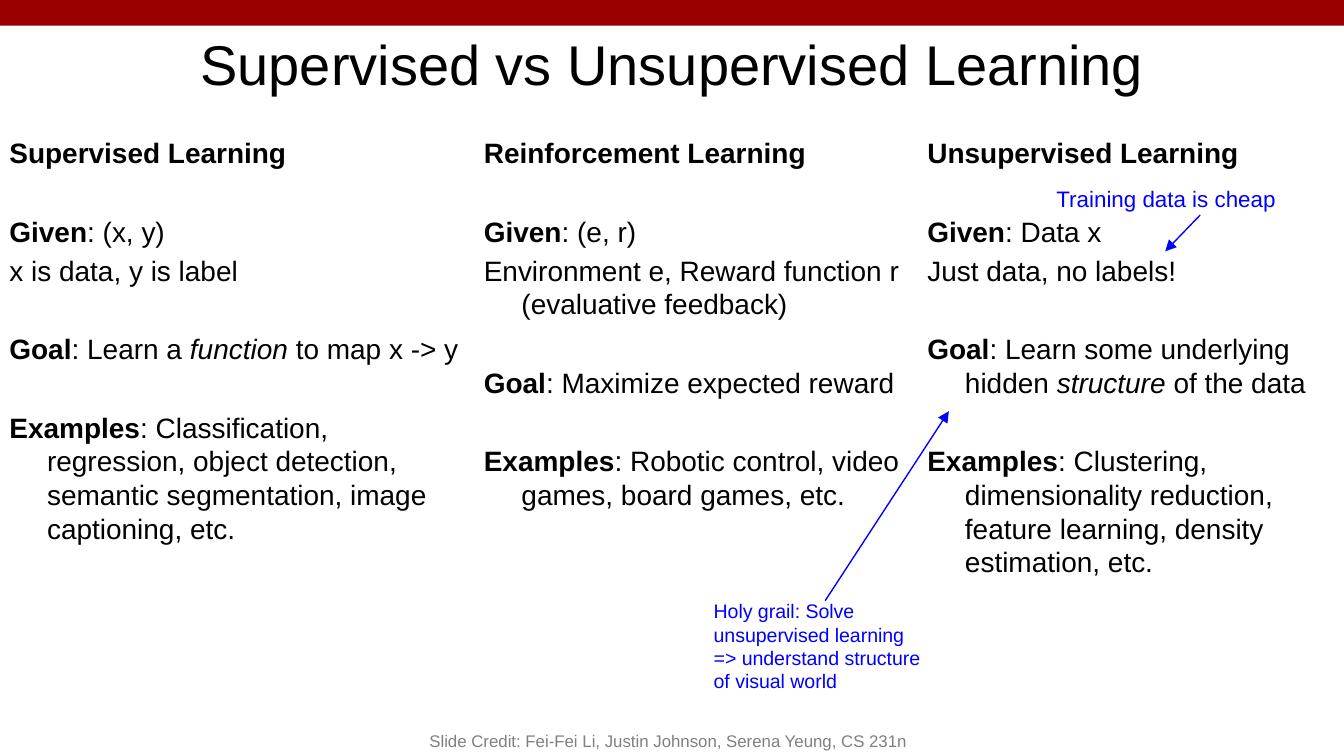
from lxml.etree import SubElement
from pptx import Presentation
from pptx.dml.color import RGBColor
from pptx.enum.shapes import MSO_CONNECTOR, MSO_SHAPE
from pptx.enum.text import MSO_ANCHOR, MSO_AUTO_SIZE, PP_ALIGN
from pptx.oxml.ns import qn
from pptx.util import Inches, Pt

HEADING_GAP = 24
LINE_GAP = 3


def color(hex_string):
    return RGBColor.from_string(hex_string)


class SlideBuilder:
    font = "Arial"
    black, red, blue, gray = "000000", "990000", "0000FF", "808080"
    inset = 0.07

    def __init__(self, slide):
        self.slide = slide

    def place(self, shape, left, top, width, height):
        shape.left, shape.top = Inches(left), Inches(top)
        shape.width, shape.height = Inches(width), Inches(height)

    def frame(self, shape, anchor=MSO_ANCHOR.TOP, vertical_inset=inset):
        text_frame = shape.text_frame
        text_frame.word_wrap = True
        text_frame.auto_size = MSO_AUTO_SIZE.NONE
        text_frame.vertical_anchor = anchor
        text_frame.margin_left = text_frame.margin_right = Inches(self.inset)
        text_frame.margin_top = text_frame.margin_bottom = Inches(vertical_inset)
        return text_frame

    def style(self, run, size, hex_string, bold=False, italic=False):
        run.font.name = self.font
        run.font.size = Pt(size)
        run.font.color.rgb = color(hex_string)
        run.font.bold = bold
        run.font.italic = italic

    def band(self, left, top, width, height):
        shape = self.slide.shapes.add_shape(
            MSO_SHAPE.RECTANGLE, Inches(left), Inches(top), Inches(width), Inches(height))
        shape.shadow.inherit = False
        shape.fill.solid()
        shape.fill.fore_color.rgb = color(self.red)
        shape.line.fill.background()

    def title(self, text, *box):
        shape = self.slide.shapes.title
        self.place(shape, *box)
        text_frame = self.frame(shape, MSO_ANCHOR.MIDDLE)
        text_frame.text = text
        paragraph = text_frame.paragraphs[0]
        paragraph.alignment = PP_ALIGN.CENTER
        self.style(paragraph.runs[0], 30, self.black)

    def text_box(self, *box):
        return self.slide.shapes.add_textbox(*[Inches(length) for length in box])

    def column(self, shape, paragraphs, *box):
        """Fill a column from (space before, runs) pairs; a run is (text, style letter)."""
        self.place(shape, *box)
        text_frame = self.frame(shape)
        for index, (space, runs) in enumerate(paragraphs):
            paragraph = text_frame.add_paragraph() if index else text_frame.paragraphs[0]
            properties = paragraph._p.get_or_add_pPr()
            properties.set("marL", str(Inches(0.28)))
            properties.set("indent", str(Inches(-0.28)))
            SubElement(properties, qn("a:buNone"))
            paragraph.alignment = PP_ALIGN.LEFT
            paragraph.line_spacing = Pt(18)
            paragraph.space_before = Pt(space)
            for text, letter in runs:
                run = paragraph.add_run()
                run.text = text
                self.style(run, 15, self.black, letter == "b", letter == "i")

    def note(self, lines, size, line_height, *box):
        text_frame = self.frame(self.text_box(*box))
        text_frame.text = "\n".join(lines)
        for paragraph in text_frame.paragraphs:
            paragraph.line_spacing = Pt(line_height)
            self.style(paragraph.runs[0], size, self.blue)

    def credit(self, text, *box):
        text_frame = self.frame(self.text_box(*box), MSO_ANCHOR.BOTTOM, 0.04)
        text_frame.text = text
        paragraph = text_frame.paragraphs[0]
        paragraph.alignment = PP_ALIGN.CENTER
        self.style(paragraph.runs[0], 9, self.gray)

    def arrow(self, *ends):
        connector = self.slide.shapes.add_connector(
            MSO_CONNECTOR.STRAIGHT, *[Inches(length) for length in ends])
        connector.line.color.rgb = color(self.blue)
        connector.line.width = Pt(0.75)
        SubElement(connector.line._get_or_add_ln(), qn("a:tailEnd"), type="triangle")
        SubElement(connector._element.spPr, qn("a:effectLst"))


def learning_type(name, given, detail, goal, examples):
    return [
        (0, [(name, "b")]),
        (HEADING_GAP, [("Given", "b"), (": " + given, "")]),
        (LINE_GAP, [(detail, "")]),
        (HEADING_GAP, [("Goal", "b"), *goal]),
        (HEADING_GAP, [("Examples", "b"), (": " + examples, "")]),
    ]


def main():
    presentation = Presentation()
    presentation.slide_width = Inches(10)
    presentation.slide_height = Inches(10) * 9 // 16
    slide = presentation.slides.add_slide(presentation.slide_layouts[3])
    builder = SlideBuilder(slide)

    builder.band(0, 0, 10, 0.19)
    builder.title("Supervised vs Unsupervised Learning", 0.75, 0.19, 8.5, 0.56)

    supervised = learning_type(
        "Supervised Learning", "(x, y)", "x is data, y is label",
        [(": Learn a ", ""), ("function", "i"), (" to map x -> y", "")],
        "Classification, regression, object detection, semantic segmentation, "
        "image captioning, etc.")
    reinforcement = learning_type(
        "Reinforcement Learning", "(e, r)",
        "Environment e, Reward function r (evaluative feedback)",
        [(": Maximize expected reward", "")],
        "Robotic control, video games, board games, etc.")
    unsupervised = learning_type(
        "Unsupervised Learning", "Data x", "Just data, no labels!",
        [(": Learn some underlying hidden ", ""), ("structure", "i"), (" of the data", "")],
        "Clustering, dimensionality reduction, feature learning, density estimation, etc.")

    top = 0.94
    builder.column(slide.placeholders[1], supervised, 0, top, 3.53, 3.62)
    builder.column(slide.placeholders[2], unsupervised, 6.83, top, 3.25, 4.36)
    builder.credit("Slide Credit: Fei-Fei Li, Justin Johnson, Serena Yeung, CS 231n",
                   2.75, 5.25, 4.44, 0.38)
    reinforcement_box = (3.53, top, 3.39, 4.37)
    builder.column(builder.text_box(*reinforcement_box), reinforcement, *reinforcement_box)

    builder.note(["Holy grail: Solve unsupervised learning",
                  "=> understand structure of visual world"],
                 10.5, 12.5, 5.24, 4.39, 1.82, 0.92)
    builder.arrow(6.14, 4.47, 7.06, 3.06)
    builder.note(["Training data is cheap"], 12, 14.3, 7.79, 1.31, 2.29, 0.37)
    builder.arrow(8.93, 1.6, 8.67, 1.87)

    presentation.save("out.pptx")


if __name__ == "__main__":
    main()
